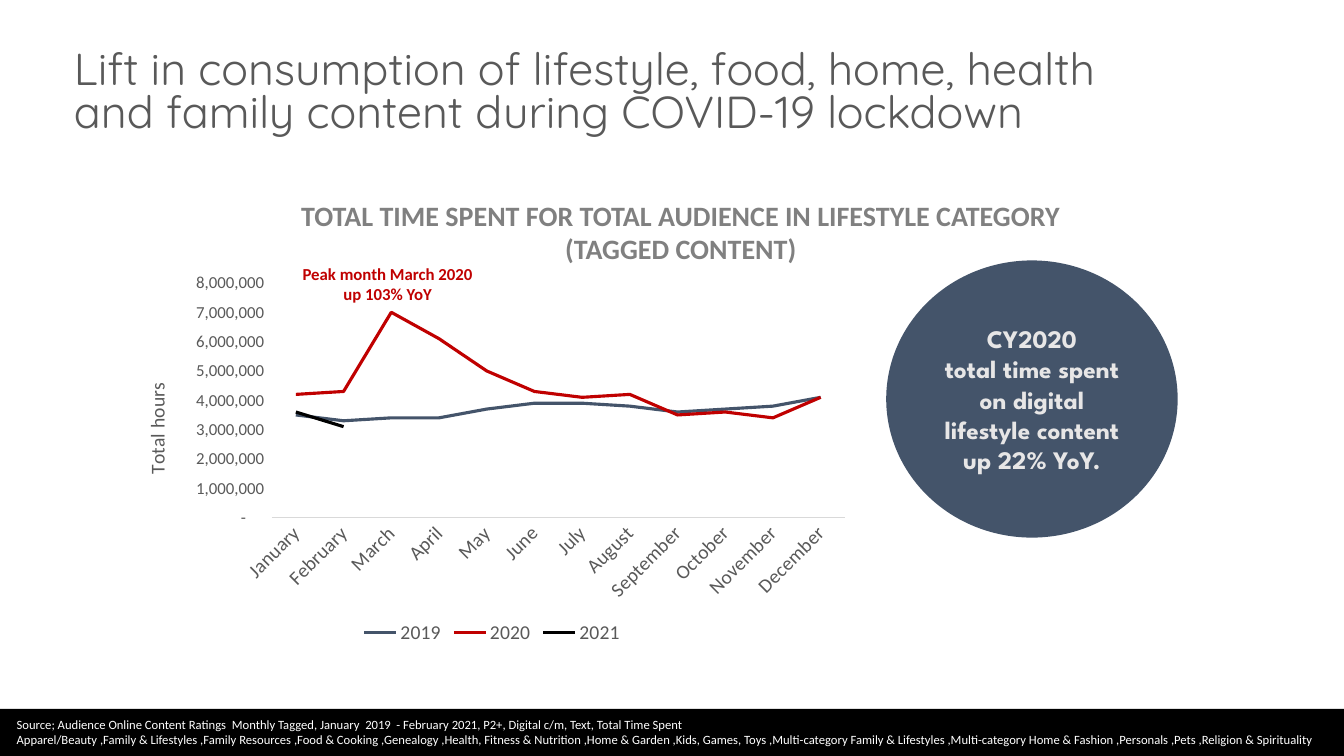
from lxml import etree
from pptx import Presentation
from pptx import util as u
from pptx.chart.data import CategoryChartData
from pptx.dml.color import RGBColor
from pptx.enum import chart as charts, shapes, text
from pptx.oxml import parse_xml
from pptx.oxml.ns import nsdecls

COLORS = {
    "black": "000000", "white": "FFFFFF", "slate": "44546A", "red": "C00000",
    "title": "595959", "heading": "808080", "pale": "E7E6E6", "axis": "D9D9D9",
}
MONTHS = ["January", "February", "March", "April", "May", "June", "July",
          "August", "September", "October", "November", "December"]
# Millions of hours per month
HOURS = {
    "2019": ("slate", [3.5, 3.3, 3.4, 3.4, 3.7, 3.9, 3.9, 3.8, 3.6, 3.7, 3.8, 4.1]),
    "2020": ("red", [4.2, 4.3, 7.0, 6.1, 5.0, 4.3, 4.1, 4.2, 3.5, 3.6, 3.4, 4.1]),
    "2021": ("black", [3.6, 3.1] + [None] * 10),
}

deck = Presentation()
deck.slide_width, deck.slide_height = u.Inches(13.33), u.Inches(7.5)
page = deck.slides.add_slide(deck.slide_layouts[5])


def grid(left, top, width, height):
    """Turn columns and rows of a 160 by 90 grid into slide lengths."""
    column, row = deck.slide_width / 160, deck.slide_height / 90
    return [round(n) for n in (left * column, top * row, width * column, height * row)]


def write(box, lines, size, color, font="Calibri", bold=False,
          align=text.PP_ALIGN.CENTER, anchor=text.MSO_ANCHOR.TOP, spacing=None):
    frame = box.text_frame
    frame.word_wrap = True
    frame.auto_size = text.MSO_AUTO_SIZE.NONE
    frame.vertical_anchor = anchor
    for index, line in enumerate(lines):
        para = frame.add_paragraph() if index else frame.paragraphs[0]
        para.alignment = align
        para.line_spacing = spacing
        span = para.add_run()
        span.text = line
        span.font.name, span.font.size, span.font.bold = font, u.Pt(size), bold
        span.font.color.rgb = RGBColor.from_string(COLORS[color])


# Title
title = page.shapes.title
title.left, title.top, title.width, title.height = grid(7.6, 2.9, 131.4, 16.7)
write(title, ["Lift in consumption of lifestyle, food, home, health and family content "
              "during COVID-19 lockdown"], 32, "title", font="Quicksand",
      align=text.PP_ALIGN.LEFT, anchor=text.MSO_ANCHOR.MIDDLE, spacing=0.8)

# Filled shapes
filled = {}
for name, kind, place, color in [
    ("footer", shapes.MSO_SHAPE.RECTANGLE, (0, 84.4, 160, 5.6), "black"),
    ("circle", shapes.MSO_SHAPE.OVAL, (105.5, 31, 34.7, 33), "slate"),
]:
    shape = page.shapes.add_shape(kind, *grid(*place))
    shape.shadow.inherit = False
    shape.fill.solid()
    shape.fill.fore_color.rgb = RGBColor.from_string(COLORS[color])
    shape.line.fill.background()
    filled[name] = shape
write(filled["circle"], ["CY2020", "total time spent on digital lifestyle content",
                         "up 22% YoY."], 18, "pale", font="League Spartan", bold=True,
      anchor=text.MSO_ANCHOR.MIDDLE)

# Line chart
data = CategoryChartData(
    number_format='_-* #,##0_-;\\-* #,##0_-;_-* "-"??_-;_-@_')
data.categories = MONTHS
for year, (color, millions) in HOURS.items():
    data.add_series(year, [None if n is None else round(n * 1_000_000) for n in millions])
chart = page.shapes.add_chart(charts.XL_CHART_TYPE.LINE, *grid(14.9, 31.4, 87.4, 45.8),
                              data).chart
chart.has_title = False
chart.font.name, chart.font.size = "Calibri", u.Pt(10)
chart.plots[0].vary_by_categories = False
for series in chart.plots[0].series:
    series.smooth = False
    series.marker.style = charts.XL_MARKER_STYLE.NONE
    series.format.line.width = u.Pt(2.25)
    series.format.line.color.rgb = RGBColor.from_string(COLORS[HOURS[series.name][0]])

months, hours = chart.category_axis, chart.value_axis
hours.has_major_gridlines = False
hours.minimum_scale, hours.maximum_scale, hours.major_unit = 0, 8_000_000, 1_000_000
hours.has_title = True
write(hours.axis_title, ["Total hours"], 14, "title")

chart.has_legend = True
chart.legend.position = charts.XL_LEGEND_POSITION.BOTTOM
chart.legend.include_in_layout = False
for part, size in [(months.tick_labels, 14), (hours.tick_labels, 12), (chart.legend, 14)]:
    part.font.name, part.font.size = "Calibri", u.Pt(size)
    part.font.color.rgb = RGBColor.from_string(COLORS["title"])
for axis in (months, hours):
    axis.major_tick_mark = axis.minor_tick_mark = charts.XL_TICK_MARK.NONE
months.format.line.color.rgb = RGBColor.from_string(COLORS["axis"])
months.format.line.width = u.Pt(0.75)
hours.format.line.fill.background()
months._element.txPr.bodyPr.set("rot", "-2700000")
title_body = hours.axis_title.text_frame._txBody.bodyPr
title_body.set("rot", "-5400000")
title_body.set("vert", "horz")

# Fixed places, as shares of the chart, for the plot and the axis title
plot_area = chart._chartSpace.chart.plotArea
axis_title = hours.axis_title._element
for owner, position, shares in [
    (plot_area, 0, {"x": 0.2, "y": 0.05, "w": 0.78, "h": 0.61}),
    (axis_title, 1, {"x": 0.02, "y": 0.3}),
]:
    for old in owner.findall("{*}layout"):
        owner.remove(old)
    layout = parse_xml(f"<c:layout {nsdecls('c')}><c:manualLayout/></c:layout>")
    tag = "{" + etree.QName(layout).namespace + "}"
    settings = {"layoutTarget": "inner"} if "w" in shares else {}
    settings.update(xMode="edge", yMode="edge", **shares)
    for key, value in settings.items():
        etree.SubElement(layout[0], tag + key).set("val", str(value))
    owner.insert(position, layout)

# Heading, peak label and source
for place, lines, style in [
    ((7.6, 23, 146.9, 9.2),
     ["TOTAL TIME SPENT FOR TOTAL AUDIENCE IN LIFESTYLE CATEGORY", "(TAGGED CONTENT)"],
     dict(size=20, color="heading", bold=True)),
    ((34.7, 30.8, 22.9, 6), ["Peak month March 2020 up 103% YoY"],
     dict(size=12, color="red", bold=True)),
    ((0.8, 84.7, 158.9, 4.8),
     ["Source; Audience Online Content Ratings  Monthly Tagged, January  2019  - "
      "February 2021, P2+, Digital c/m, Text, Total Time Spent",
      "Apparel/Beauty ,Family & Lifestyles ,Family Resources ,Food & Cooking ,Genealogy "
      ",Health, Fitness & Nutrition ,Home & Garden ,Kids, Games, Toys ,Multi-category "
      "Family & Lifestyles ,Multi-category Home & Fashion ,Personals ,Pets ,Religion & "
      "Spirituality"],
     dict(size=9, color="white", align=text.PP_ALIGN.LEFT)),
]:
    write(page.shapes.add_textbox(*grid(*place)), lines, **style)

deck.save("out.pptx")
